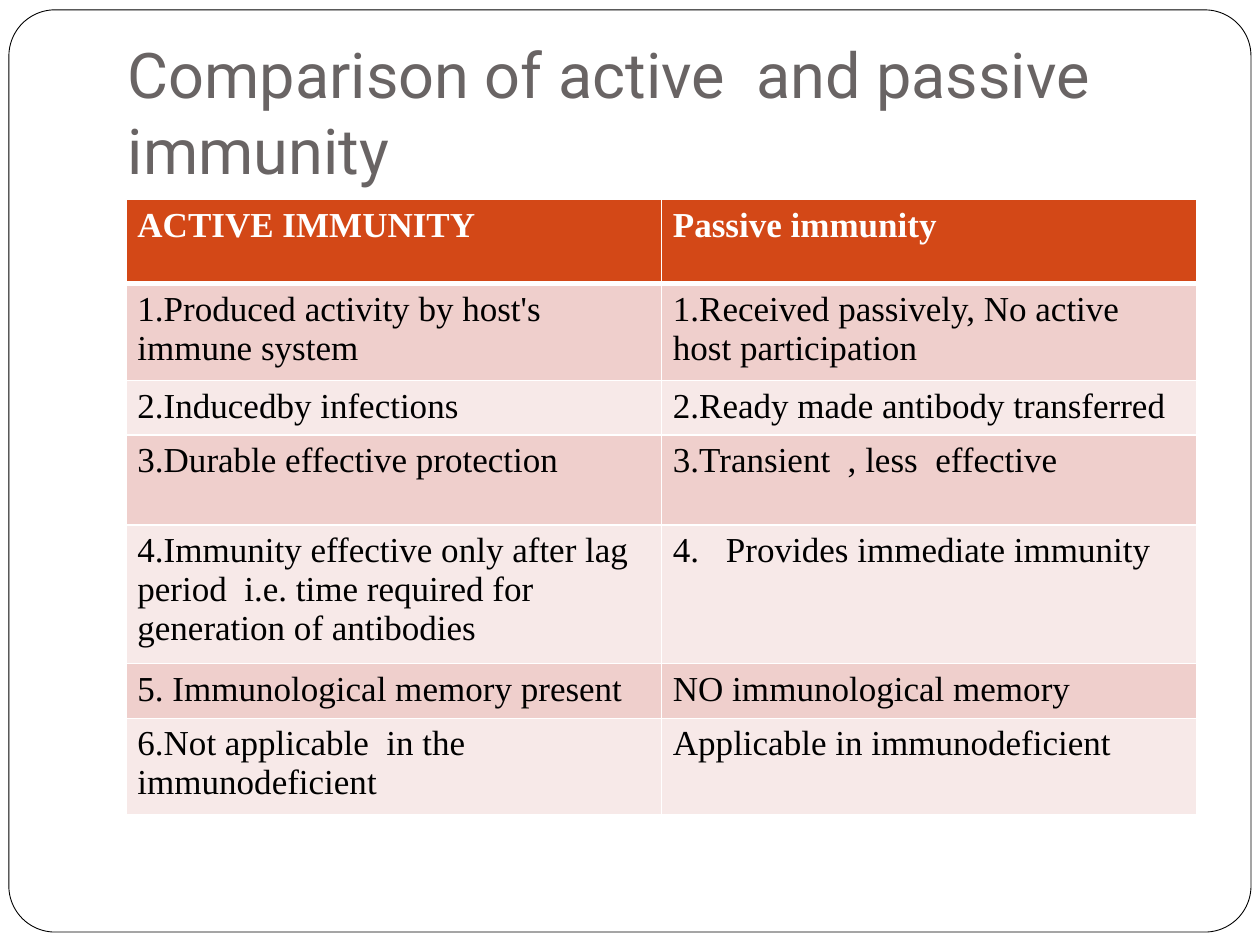
import pptx
import pptx.util
import pptx.dml.color
import pptx.enum.shapes
import pptx.enum.text
import pptx.oxml
import pptx.oxml.ns
import lxml.etree

Cm, Pt = pptx.util.Cm, pptx.util.Pt
qn = pptx.oxml.ns.qn

# Content: each row is (height in cm, active, passive)
HEADING = "Comparison of active  and passive immunity"
COMPARISON = [
    (1.7, "ACTIVE IMMUNITY", "Passive immunity"),
    (1.82, "1.Produced activity by host's immune system",
     "1.Received passively, No active host participation"),
    (1.04, "2.Inducedby infections", "2.Ready made antibody transferred"),
    (1.81, "3.Durable effective protection", "3.Transient  , less  effective"),
    (2.61, "4.Immunity effective only after lag period  i.e. time required "
     "for generation of antibodies", "4.\tProvides immediate immunity"),
    (1.04, "5. Immunological memory present", "NO immunological memory"),
    (1.81, "6.Not applicable  in the immunodeficient",
     "Applicable in immunodeficient"),
]

THEME = {
    "heading_font": "Roboto", "heading_size": 36, "heading": "696464",
    "body_font": "Times New Roman", "body_size": 20, "body": "000000",
    "header_text": "FFFFFF", "header_fill": "D34817",
    "bands": ("EFCFCC", "F7E9E8"), "paper": "FFFFFF", "frame": "000000",
}


def colour(name):
    return pptx.dml.color.RGBColor.from_string(name)


def style(paragraph, font, size, text_colour, bold=False):
    for run in paragraph.runs:
        run.font.name = font
        run.font.size = Pt(size)
        run.font.bold = bold
        run.font.color.rgb = colour(text_colour)


def add_borders(cell, widths):
    """Draw borders; widths are points for left, right, top, bottom."""
    properties = cell._tc.get_or_add_tcPr()
    for position, (side, width) in enumerate(zip("LRTB", widths)):
        border = lxml.etree.Element(qn(f"a:ln{side}"), w=str(Pt(width)))
        fill = lxml.etree.SubElement(border, qn("a:solidFill"))
        lxml.etree.SubElement(fill, qn("a:srgbClr"), val=THEME["paper"])
        properties.insert(position, border)


def add_tab_stop(paragraph, position):
    tabs = lxml.etree.SubElement(paragraph._p.get_or_add_pPr(), qn("a:tabLst"))
    lxml.etree.SubElement(tabs, qn("a:tab"), pos=str(position), algn="l")


def add_frame(slide):
    frame = slide.shapes.add_shape(
        pptx.enum.shapes.MSO_SHAPE.ROUNDED_RECTANGLE,
        Cm(0.18), Cm(0.2), Cm(25.04), Cm(18.59))
    frame.adjustments[0] = 0.05
    frame.shadow.inherit = False
    frame.fill.solid()
    frame.fill.fore_color.rgb = colour(THEME["paper"])
    frame.line.color.rgb = colour(THEME["frame"])
    frame.line.width = Pt(0.5)


def add_heading(slide):
    heading = slide.shapes.add_textbox(Cm(2.33), Cm(0.84), Cm(21.59), Cm(3.18))
    text_frame = heading.text_frame
    text_frame.word_wrap = True
    text_frame.vertical_anchor = pptx.enum.text.MSO_ANCHOR.BOTTOM
    text_frame.margin_bottom = Cm(0.25)
    text_frame.text = HEADING
    style(text_frame.paragraphs[0], THEME["heading_font"],
          THEME["heading_size"], THEME["heading"])


def add_comparison(slide):
    height = sum(row[0] for row in COMPARISON)
    comparison = slide.shapes.add_table(
        len(COMPARISON), 2, Cm(2.54), Cm(4.02), Cm(21.59), Cm(height)).table
    for r, (row_height, *texts) in enumerate(COMPARISON):
        comparison.rows[r].height = Cm(row_height)
        is_header = r == 0
        fill = THEME["header_fill"] if is_header else THEME["bands"][(r - 1) % 2]
        text_colour = THEME["header_text" if is_header else "body"]
        widths = (1, 1, 3 if r == 1 else 1, 3 if is_header else 1)
        for c, text in enumerate(texts):
            cell = comparison.cell(r, c)
            cell.margin_left = cell.margin_right = Cm(0.23)
            cell.fill.solid()
            cell.fill.fore_color.rgb = colour(fill)
            add_borders(cell, widths)
            cell.text_frame.text = text
            paragraph = cell.text_frame.paragraphs[0]
            if "\t" in text:
                add_tab_stop(paragraph, Cm(1.07))
            style(paragraph, THEME["body_font"], THEME["body_size"],
                  text_colour, is_header)


def main():
    deck = pptx.Presentation()
    deck.slide_width, deck.slide_height = Cm(25.4), Cm(19.05)
    slide = deck.slides.add_slide(deck.slide_layouts[6])
    add_frame(slide)
    add_heading(slide)
    add_comparison(slide)
    deck.save("out.pptx")


if __name__ == "__main__":
    main()
